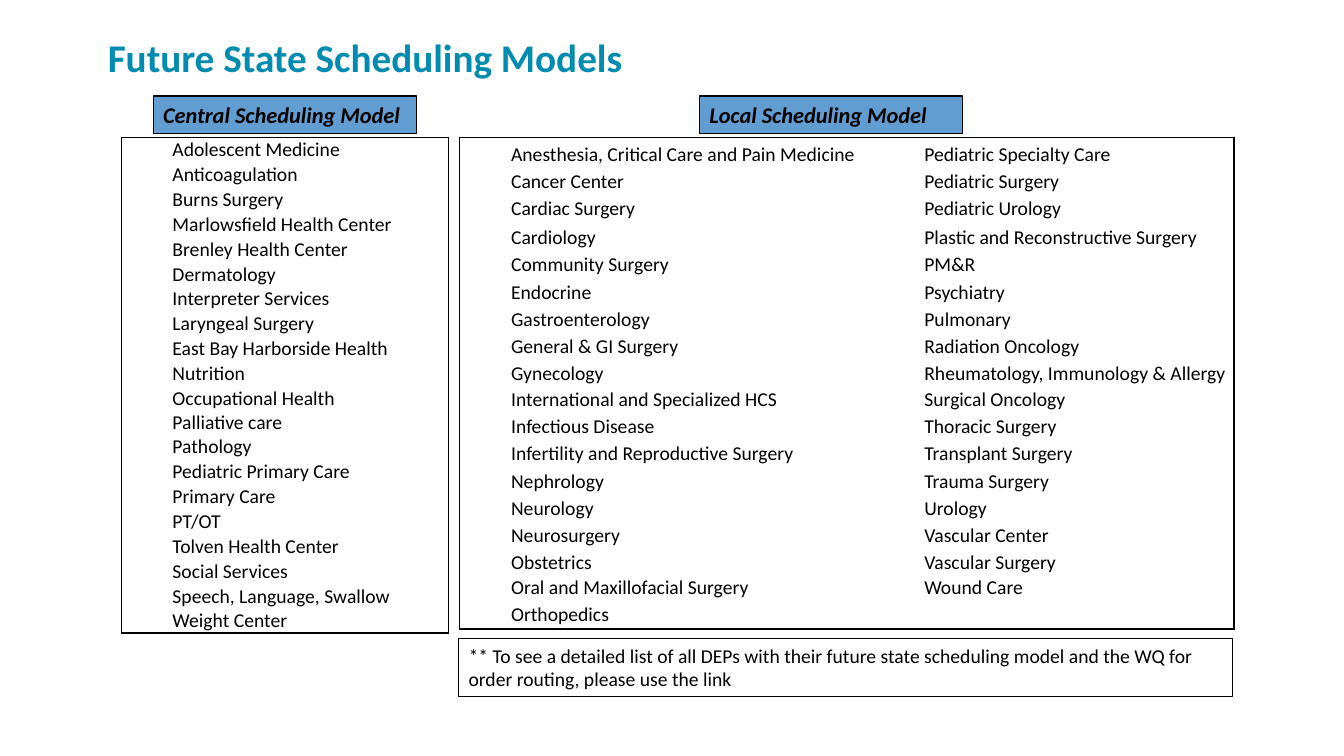
from itertools import zip_longest

from lxml.etree import SubElement
from pptx import Presentation
from pptx.dml.color import RGBColor
from pptx.enum.shapes import MSO_SHAPE
from pptx.enum.text import MSO_ANCHOR, PP_ALIGN
from pptx.oxml.ns import qn
from pptx.util import Pt

# Content
TITLE = "Future State Scheduling Models"
NOTE = ("** To see a detailed list of all DEPs with their future state scheduling model "
        "and the WQ for order routing, please use the link")
# A line break inside an entry starts a second paragraph in the same cell
CENTRAL = [
    "Adolescent Medicine", "Anticoagulation", "Burns Surgery",
    "Marlowsfield Health Center", "Brenley Health Center", "Dermatology",
    "Interpreter Services", "Laryngeal Surgery", "East Bay Harborside Health",
    "Nutrition", "Occupational Health\nPalliative care", "Pathology",
    "Pediatric Primary Care", "Primary Care", "PT/OT", "Tolven Health Center",
    "Social Services", "Speech, Language, Swallow", "Weight Center",
]
LOCAL_LEFT = [
    "Anesthesia, Critical Care and Pain Medicine", "Cancer Center", "Cardiac Surgery",
    "Cardiology", "Community Surgery", "Endocrine", "Gastroenterology",
    "General & GI Surgery", "Gynecology", "International and Specialized HCS",
    "Infectious Disease", "Infertility and Reproductive Surgery", "Nephrology",
    "Neurology", "Neurosurgery", "Obstetrics", "Oral and Maxillofacial Surgery",
    "Orthopedics",
]
LOCAL_RIGHT = [
    "Pediatric Specialty Care", "Pediatric Surgery", "Pediatric Urology",
    "Plastic and Reconstructive Surgery", "PM&R", "Psychiatry", "Pulmonary",
    "Radiation Oncology", "Rheumatology, Immunology & Allergy", "Surgical Oncology",
    "Thoracic Surgery", "Transplant Surgery", "Trauma Surgery", "Urology",
    "Vascular Center", "Vascular Surgery", "Wound Care",
]

# Formats
COLORS = {"title": "008BB0", "header": "629DD1", "ink": "000000"}
TITLE_FONT = {"name": "Calibri", "size": Pt(28), "bold": True}
HEADER_FONT = {"name": "Calibri", "size": Pt(16), "bold": True, "italic": True}
BODY_FONT = {"name": "Calibri", "size": Pt(14), "bold": False}
CELL_MARGINS = {"margin_left": Pt(0.7), "margin_right": Pt(0.7),
                "margin_top": Pt(0.7), "margin_bottom": Pt(0)}
NO_GRID_STYLE = "{2D5ABB26-0587-4C30-8999-92F81FD0307C}"

# Layout
TABLE_TOP = 98
HEADER_TOP, HEADER_WIDTH, HEADER_HEIGHT = 68.6, 188, 26.6
CENTRAL_ROWS = [15.1] * len(CENTRAL)
LOCAL_ROWS = [{0: 20.9, 3: 20.9, 9: 18.7}.get(row, 19.4) for row in range(len(LOCAL_LEFT))]


def apply(target, values):
    for name, value in values.items():
        setattr(target, name, value)


def format_font(font, values, color):
    apply(font, values)
    font.color.rgb = RGBColor.from_string(COLORS[color])


def add_box(slide, left, top, width, height, text, font, fill=None):
    box = slide.shapes.add_shape(MSO_SHAPE.RECTANGLE, Pt(left), Pt(top), Pt(width), Pt(height))
    box.shadow.inherit = False
    if fill:
        box.fill.solid()
        box.fill.fore_color.rgb = RGBColor.from_string(COLORS[fill])
    else:
        box.fill.background()
    box.line.color.rgb = RGBColor.from_string(COLORS["ink"])
    box.line.width = Pt(0.75)
    frame = box.text_frame
    apply(frame, {"text": text, "word_wrap": True, "vertical_anchor": MSO_ANCHOR.TOP})
    paragraph = frame.paragraphs[0]
    paragraph.alignment = PP_ALIGN.LEFT
    format_font(paragraph.runs[0].font, font, "ink")


def add_border(cell, side):
    line = SubElement(cell._tc.get_or_add_tcPr(), qn(f"a:ln{side}"), w=str(Pt(1)))
    fill = SubElement(line, qn("a:solidFill"))
    SubElement(fill, qn("a:srgbClr"), val=COLORS["ink"])


def fill_cell(cell, text):
    cell.text = text
    apply(cell, CELL_MARGINS)
    for paragraph in cell.text_frame.paragraphs:
        paragraph.level = 1
        properties = paragraph._p.get_or_add_pPr()
        properties.set("marL", str(Pt(36)))
        properties.set("indent", "0")
        for run in paragraph.runs:
            format_font(run.font, BODY_FONT, "ink")
        if not paragraph.runs:
            SubElement(paragraph._p, qn("a:endParaRPr"), sz="1400")


def add_list_table(slide, left, widths, heights, columns, top_anchored=0):
    """Table with an outer frame only; the last top_anchored rows align to the top."""
    rows = list(zip_longest(*columns, fillvalue=""))
    table = slide.shapes.add_table(len(rows), len(widths), Pt(left), Pt(TABLE_TOP),
                                   Pt(sum(widths)), Pt(sum(heights))).table
    apply(table, {"first_row": False, "horz_banding": False})
    table._tbl.tblPr.find(qn("a:tableStyleId")).text = NO_GRID_STYLE
    for column, width in zip(table.columns, widths):
        column.width = Pt(width)
    for row, height in zip(table.rows, heights):
        row.height = Pt(height)
    last_row, last_column = len(rows) - 1, len(widths) - 1
    for r, entries in enumerate(rows):
        for c, entry in enumerate(entries):
            cell = table.cell(r, c)
            fill_cell(cell, entry)
            at_top = r > last_row - top_anchored
            cell.vertical_anchor = MSO_ANCHOR.TOP if at_top else MSO_ANCHOR.BOTTOM
            edges = {"L": c == 0, "R": c == last_column, "T": r == 0, "B": r == last_row}
            for side, on_frame in edges.items():
                if on_frame:
                    add_border(cell, side)
            cell.fill.background()


def main():
    deck = Presentation()
    apply(deck, {"slide_width": Pt(960), "slide_height": Pt(540)})
    slide = deck.slides.add_slide(deck.slide_layouts[5])

    # Title
    title = slide.shapes.title
    apply(title, {"left": Pt(69.8), "top": Pt(14.4), "width": Pt(841.7), "height": Pt(51.8)})
    apply(title.text_frame, {"text": TITLE, "vertical_anchor": MSO_ANCHOR.MIDDLE})
    heading = title.text_frame.paragraphs[0]
    heading.alignment = PP_ALIGN.LEFT
    format_font(heading.runs[0].font, TITLE_FONT, "title")

    # Department lists
    add_list_table(slide, 328.4, [295.2, 257.8], LOCAL_ROWS, [LOCAL_LEFT, LOCAL_RIGHT], 2)
    add_list_table(slide, 86.5, [234], CENTRAL_ROWS, [CENTRAL])

    # List headers
    for left, label in [(109.4, "Central Scheduling Model"), (499.6, "Local Scheduling Model")]:
        add_box(slide, left, HEADER_TOP, HEADER_WIDTH, HEADER_HEIGHT, label, HEADER_FONT, "header")

    # Footnote
    add_box(slide, 327.6, 456.2, 553, 41.2, NOTE, BODY_FONT)

    deck.save("out.pptx")


if __name__ == "__main__":
    main()
